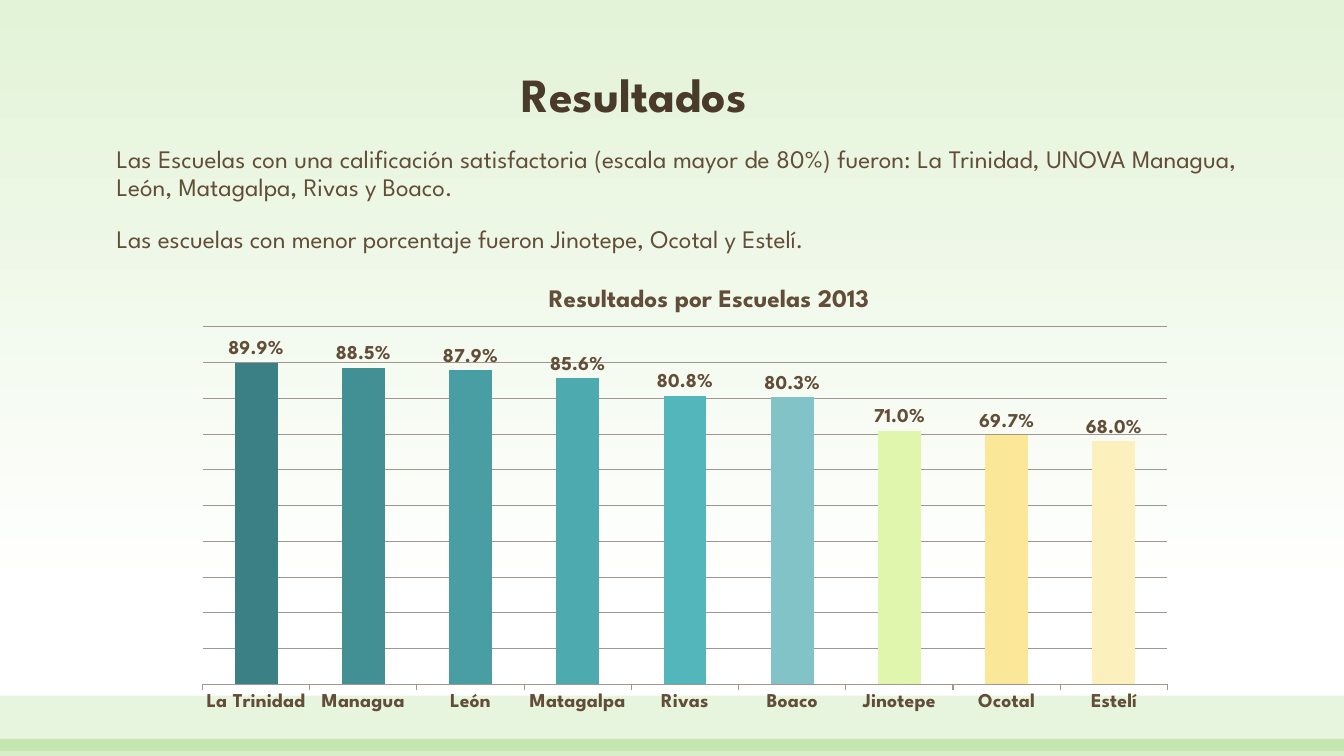
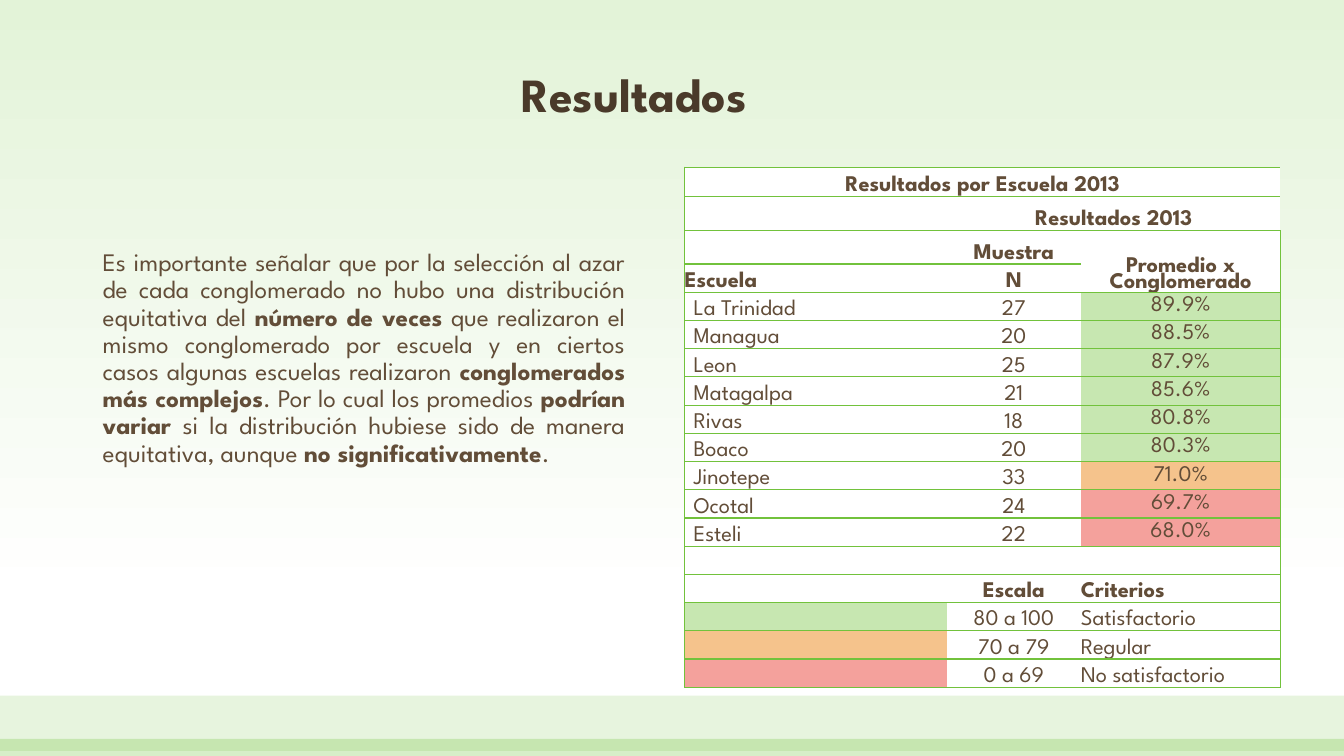
import dataclasses

import lxml.etree
import pptx
import pptx.chart.data
import pptx.dml.color
import pptx.enum.chart
import pptx.enum.shapes
import pptx.enum.text
import pptx.oxml
import pptx.oxml.ns
import pptx.util

Inches, Pt = pptx.util.Inches, pptx.util.Pt
Align = pptx.enum.text.PP_ALIGN
Anchor = pptx.enum.text.MSO_ANCHOR
qn = pptx.oxml.ns.qn


@dataclasses.dataclass(frozen=True)
class Theme:
    font: str = "League Spartan"
    title: str = "4A3A2A"
    text: str = "624D38"
    green: str = "72C23C"
    sky: str = "E3F3D8"
    white: str = "FFFFFF"
    grid: str = "A09890"
    good: str = "C7E7B1"
    fair: str = "F5C38C"
    poor: str = "F4A19C"
    bars: tuple = ("3B8084", "429093", "489EA3", "4DAAAF", "53B6BB",
                   "82C3C8", "DFF6AC", "FAE798", "FCF0BC")
    head_size: int = 34
    body_size: int = 18
    cell_size: int = 16
    mark_size: int = 14
    base_size: int = 10


THEME = Theme()

# Chart label, table label, sample size, mean score
SCHOOLS = [
    ("La Trinidad", "La Trinidad", 27, 0.899),
    ("Managua", "Managua", 20, 0.885),
    ("León", "Leon", 25, 0.879),
    ("Matagalpa", "Matagalpa", 21, 0.856),
    ("Rivas", "Rivas", 18, 0.808),
    ("Boaco", "Boaco", 20, 0.803),
    ("Jinotepe", "Jinotepe", 33, 0.71),
    ("Ocotal", "Ocotal", 24, 0.697),
    ("Estelí", "Esteli", 22, 0.68),
]
SCALE = [
    (THEME.good, "80 a 100", "Satisfactorio"),
    (THEME.fair, "70 a 79", "Regular"),
    (THEME.poor, "0 a 69", "No satisfactorio"),
]


def rgb(code):
    return pptx.dml.color.RGBColor.from_string(code)


def put(item, **values):
    for name, value in values.items():
        setattr(item, name, value)


def style(font, size, color=THEME.text, bold=False):
    put(font, name=THEME.font, size=Pt(size), bold=bold)
    font.color.rgb = rgb(color)


def paint(fill, color):
    fill.solid()
    fill.fore_color.rgb = rgb(color)


def band(slide, top, height, alpha):
    """Add a full-width green strip; alpha is its opacity in percent."""
    shape = slide.shapes.add_shape(
        pptx.enum.shapes.MSO_SHAPE.RECTANGLE,
        0, Inches(top), Inches(13.33), Inches(height))
    shape.shadow.inherit = False
    shape.line.fill.background()
    paint(shape.fill, THEME.green)
    tint = next(shape.element.spPr.iter(qn("a:srgbClr")))
    lxml.etree.SubElement(tint, qn("a:alpha"), val=str(alpha * 1000))


def frame(slide, box, anchor=Anchor.TOP):
    shape = slide.shapes.add_textbox(*map(Inches, box))
    put(shape.text_frame, word_wrap=True, vertical_anchor=anchor)
    return shape.text_frame


def write(para, text, size, color=THEME.text, bold=False):
    run = para.add_run()
    run.text = text
    style(run.font, size, color, bold)


def body(slide, box, paras):
    """Add justified text; every second part of a paragraph is bold."""
    text = frame(slide, box)
    for index, parts in enumerate(paras):
        para = text.add_paragraph() if index else text.paragraphs[0]
        put(para, alignment=Align.JUSTIFY, line_spacing=0.9, space_before=Pt(18))
        para._p.get_or_add_pPr().set("marL", str(Inches(0.05)))
        for place, part in enumerate(parts):
            write(para, part, THEME.body_size, bold=place % 2 == 1)


def start(deck, title):
    slide = deck.slides.add_slide(deck.slide_layouts[6])
    band(slide, 6.9, 0.55, 17)
    band(slide, 7.33, 0.17, 28)
    para = frame(slide, (5.07, 0.48, 3.19, 0.79), Anchor.BOTTOM).paragraphs[0]
    para.line_spacing = 0.9
    write(para, title, THEME.head_size, THEME.title, True)
    return slide


def backdrop(master):
    fill = master.background.fill
    fill.gradient()
    fill.gradient_angle = 270
    stops = ((0, THEME.sky), (0.79, THEME.white))
    for stop, (place, color) in zip(fill.gradient_stops, stops):
        stop.position = place
        stop.color.rgb = rgb(color)


def place(node, index, **spots):
    """Give a chart part a fixed place, as shares of the chart's size."""
    for old in node.findall(qn("c:layout")):
        node.remove(old)
    layout = node.makeelement(qn("c:layout"))
    node.insert(index, layout)
    manual = lxml.etree.SubElement(layout, qn("c:manualLayout"))
    modes = {"xMode": "edge", "yMode": "edge"}
    if "w" in spots:
        modes = {"layoutTarget": "inner", **modes}
    for name, value in {**modes, **spots}.items():
        lxml.etree.SubElement(manual, qn("c:" + name), val=str(value))


def graph(slide, box):
    data = pptx.chart.data.CategoryChartData(number_format="0.0%")
    data.categories = [school[0] for school in SCHOOLS]
    data.add_series("Series 1", [school[3] for school in SCHOOLS])
    chart = slide.shapes.add_chart(
        pptx.enum.chart.XL_CHART_TYPE.COLUMN_CLUSTERED,
        *map(Inches, box), data).chart
    style(chart.font, THEME.base_size)
    chart.has_legend = False

    para = chart.chart_title.text_frame.paragraphs[0]
    write(para, "Resultados por Escuelas 2013", THEME.body_size, bold=True)
    place(chart.chart_title.element if hasattr(chart.chart_title, "element")
          else chart.chart_title._element, 1, x=0.36, y=0.03)
    place(next(chart.element.iter(qn("c:plotArea"))), 0,
          x=0.02, y=0.13, w=0.96, h=0.79)

    put(chart.value_axis, visible=False, minimum_scale=0, maximum_scale=1,
        major_unit=0.1, has_major_gridlines=True)
    axis = chart.category_axis
    style(axis.tick_labels.font, THEME.mark_size, bold=True)
    for line in (chart.value_axis.major_gridlines.format.line, axis.format.line):
        line.width = Pt(0.75)
        line.color.rgb = rgb(THEME.grid)

    plot = chart.plots[0]
    put(plot, gap_width=150, vary_by_categories=False, has_data_labels=True)
    put(plot.data_labels, show_value=True, number_format="0.0%",
        number_format_is_linked=False,
        position=pptx.enum.chart.XL_LABEL_POSITION.OUTSIDE_END)
    style(plot.data_labels.font, THEME.mark_size, bold=True)
    for index, color in enumerate(THEME.bars):
        paint(plot.series[0].points[index].format.fill, color)


def border(cell, sides):
    """Draw green lines on the given sides and none on the others."""
    props = cell._tc.get_or_add_tcPr()
    for side in "LRTB":
        line = lxml.etree.SubElement(props, qn("a:ln" + side), w=str(Pt(1)))
        if side in sides:
            fill = lxml.etree.SubElement(line, qn("a:solidFill"))
            lxml.etree.SubElement(fill, qn("a:srgbClr"), val=THEME.green)
        else:
            lxml.etree.SubElement(line, qn("a:noFill"))


def fill_cell(cell, text, sides, color=THEME.white, bold=False,
              align=Align.CENTER, anchor=Anchor.BOTTOM, inset=0):
    border(cell, sides)
    paint(cell.fill, color)
    put(cell, margin_left=Inches(inset), margin_right=0, margin_top=0,
        margin_bottom=0, vertical_anchor=anchor)
    para = cell.text_frame.paragraphs[0]
    para.alignment = align
    if text:
        write(para, text, THEME.cell_size, bold=bold)
    else:
        lxml.etree.SubElement(para._p, qn("a:endParaRPr"),
                              sz=str(THEME.cell_size * 100))


def grade(score):
    if score >= 0.8:
        return THEME.good
    return THEME.fair if score >= 0.7 else THEME.poor


def list_rows():
    """Return the table rows, each cell a text with its format."""
    bold, left = {"bold": True}, {"align": Align.LEFT}
    heads = [
        ("Resultados por Escuela 2013", "", ""),
        ("", "Resultados 2013", ""),
        ("", "Muestra", "Promedio x Conglomerado"),
    ]
    rows = [[(text, bold) for text in head] for head in heads]
    rows.append([("Escuela", {**bold, **left}), ("N", bold), ("", bold)])
    for _, name, count, score in SCHOOLS:
        rows.append([
            (name, {**left, "inset": 0.09}),
            (str(count), {}),
            (f"{score:.1%}", {"color": grade(score), "anchor": Anchor.MIDDLE}),
        ])
    rows.append([("", {})] * 3)
    rows.append([("", {}), ("Escala", bold), ("Criterios", {**bold, **left})])
    for color, span, label in SCALE:
        rows.append([("", {"color": color}), (span, {}), (label, left)])
    return rows


def grid(slide, box):
    rows = list_rows()
    table = slide.shapes.add_table(len(rows), 3, *map(Inches, box)).table
    put(table, first_row=False, horz_banding=False)
    for column, width in zip(table.columns, (2.6, 1.33, 1.98)):
        column.width = Inches(width)
    heights = [0.29, 0.34, 0.33] + [0.28] * (len(rows) - 3)
    for row, height in zip(table.rows, heights):
        row.height = Inches(height)
    for y, row in enumerate(rows):
        for x, (text, fmt) in enumerate(row):
            sides = "TB" + {0: "L", 2: "R"}.get(x, "")
            fill_cell(table.cell(y, x), text, sides, **fmt)
    table.cell(2, 2).text_frame.paragraphs[0].line_spacing = 0.8
    for first, last in (((0, 0), (0, 2)), ((1, 1), (1, 2)), ((2, 2), (3, 2))):
        table.cell(*first).merge(table.cell(*last))


def main():
    deck = pptx.Presentation()
    put(deck, slide_width=Inches(13.33), slide_height=Inches(7.5))
    backdrop(deck.slide_master)

    slide = start(deck, "Resultados")
    body(slide, (1.01, 1.41, 11.36, 1.33), [
        ["Las Escuelas con una calificación satisfactoria (escala mayor de 80%) "
         "fueron: La Trinidad, UNOVA Managua, León, Matagalpa, Rivas y Boaco."],
        ["Las escuelas con menor porcentaje fueron Jinotepe, Ocotal y Estelí."],
    ])
    graph(slide, (1.81, 2.66, 9.97, 4.49))

    slide = start(deck, "Resultados")
    body(slide, (0.87, 2.43, 5.43, 3.23), [[
        "Es importante señalar que por la selección al azar de cada conglomerado "
        "no hubo una distribución equitativa del ",
        "número de veces",
        " que realizaron el mismo conglomerado por escuela y en ciertos casos "
        "algunas escuelas realizaron ",
        "conglomerados más complejos",
        ". Por lo cual los promedios ",
        "podrían variar ",
        "si la distribución hubiese sido de manera equitativa, aunque ",
        "no significativamente",
        ".",
    ]])
    grid(slide, (6.79, 1.66, 5.91, 5.18))
    deck.save("out.pptx")


if __name__ == "__main__":
    main()
